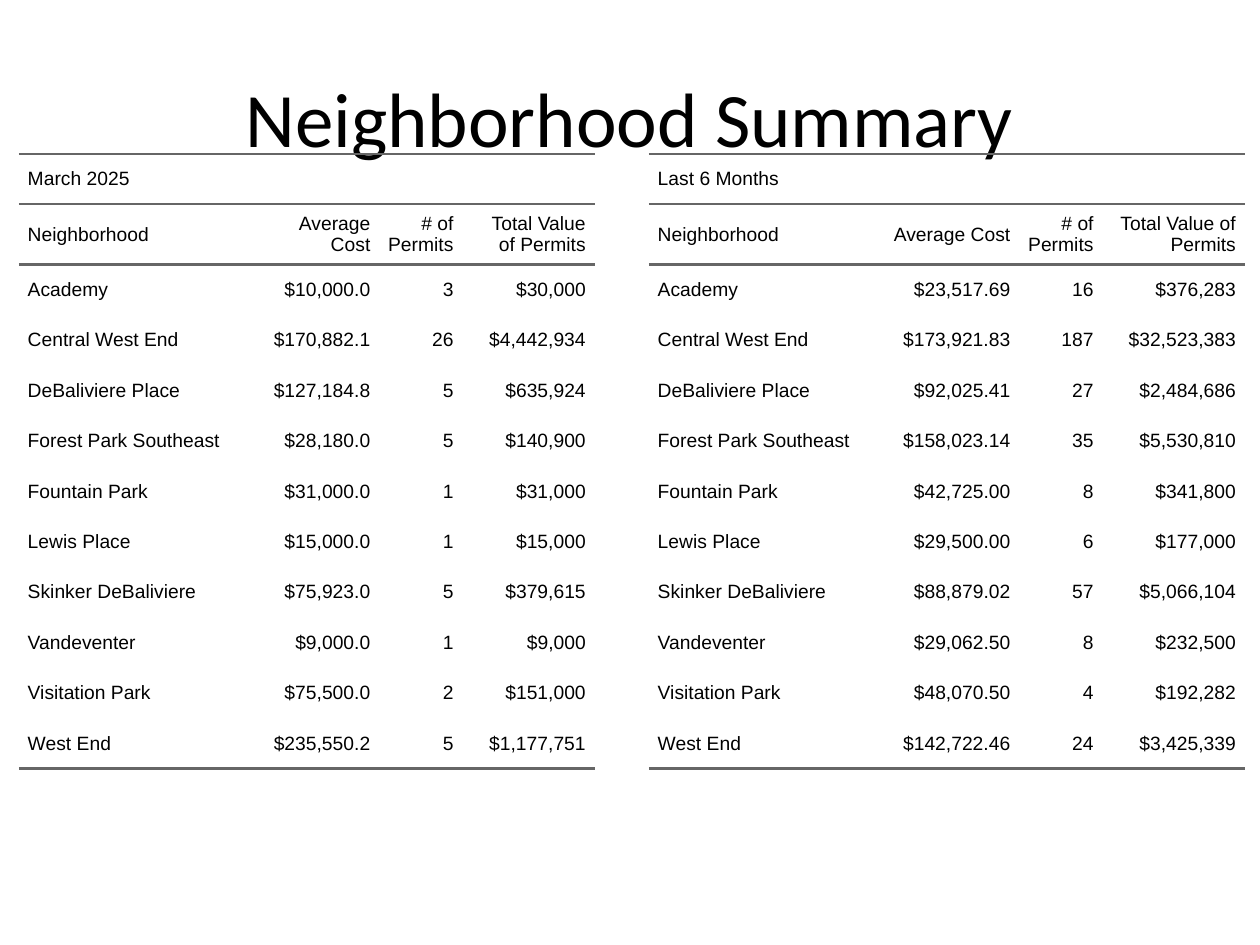
import lxml.etree
import pptx
import pptx.dml.color
import pptx.enum.text
import pptx.oxml.ns
import pptx.util

PX = 9144  # EMU per px, 100 px to the inch
COLORS = {"text": "000000", "rule": "666666"}
ROW_HEIGHT, PADDING = 40, 7
HEADINGS = ("Neighborhood", "Average Cost", "# of Permits", "Total Value of Permits")
MARCH = [
    ("Academy", "$10,000.0", "3", "$30,000"),
    ("Central West End", "$170,882.1", "26", "$4,442,934"),
    ("DeBaliviere Place", "$127,184.8", "5", "$635,924"),
    ("Forest Park Southeast", "$28,180.0", "5", "$140,900"),
    ("Fountain Park", "$31,000.0", "1", "$31,000"),
    ("Lewis Place", "$15,000.0", "1", "$15,000"),
    ("Skinker DeBaliviere", "$75,923.0", "5", "$379,615"),
    ("Vandeventer", "$9,000.0", "1", "$9,000"),
    ("Visitation Park", "$75,500.0", "2", "$151,000"),
    ("West End", "$235,550.2", "5", "$1,177,751"),
]
SIX_MONTHS = [
    ("Academy", "$23,517.69", "16", "$376,283"),
    ("Central West End", "$173,921.83", "187", "$32,523,383"),
    ("DeBaliviere Place", "$92,025.41", "27", "$2,484,686"),
    ("Forest Park Southeast", "$158,023.14", "35", "$5,530,810"),
    ("Fountain Park", "$42,725.00", "8", "$341,800"),
    ("Lewis Place", "$29,500.00", "6", "$177,000"),
    ("Skinker DeBaliviere", "$88,879.02", "57", "$5,066,104"),
    ("Vandeventer", "$29,062.50", "8", "$232,500"),
    ("Visitation Park", "$48,070.50", "4", "$192,282"),
    ("West End", "$142,722.46", "24", "$3,425,339"),
]


def add_text(para, text, font, size):
    span = para.add_run()
    span.text = text
    span.font.name = font
    span.font.size = pptx.util.Pt(size)
    span.font.color.rgb = pptx.dml.color.RGBColor.from_string(COLORS["text"])


def set_borders(cell, ruled):
    """Rule the sides named in ruled and clear the other ones."""
    properties = cell._tc.get_or_add_tcPr()
    for position, side in enumerate(("lnL", "lnR", "lnT", "lnB")):
        line = lxml.etree.Element(pptx.oxml.ns.qn("a:" + side))
        if side in ruled:
            line.set("w", str(pptx.util.Pt(1.5)))
            fill = lxml.etree.SubElement(line, pptx.oxml.ns.qn("a:solidFill"))
            color = lxml.etree.SubElement(fill, pptx.oxml.ns.qn("a:srgbClr"))
            color.set("val", COLORS["rule"])
        else:
            line.set("w", "0")
            lxml.etree.SubElement(line, pptx.oxml.ns.qn("a:noFill"))
        properties.insert(position, line)


def fill_cell(cell, text, align):
    cell.vertical_anchor = pptx.enum.text.MSO_ANCHOR.MIDDLE
    cell.margin_left = cell.margin_right = 0
    cell.margin_top = cell.margin_bottom = PADDING * PX
    para = cell.text_frame.paragraphs[0]
    para.alignment = align
    para.space_before = para.space_after = pptx.util.Pt(5)
    properties = para._p.get_or_add_pPr()
    for side in ("marL", "marR"):
        properties.set(side, str(PADDING * PX))
    properties.set("indent", "0")
    add_text(para, text, "Arial", 11)


def add_title(page, box, text):
    title = page.shapes.title
    title.left, title.top, title.width, title.height = (v * PX for v in box)
    title.text_frame.vertical_anchor = pptx.enum.text.MSO_ANCHOR.MIDDLE
    para = title.text_frame.paragraphs[0]
    para.alignment = pptx.enum.text.PP_ALIGN.CENTER
    add_text(para, text, "Calibri", 44)


def add_permit_table(page, left, top, widths, period, records):
    rows = [(period,), HEADINGS, *records]
    box = (left, top, sum(widths), ROW_HEIGHT * len(rows))
    table = page.shapes.add_table(len(rows), len(widths), *(v * PX for v in box)).table
    table.first_row = table.horz_banding = False
    for column, width in zip(table.columns, widths):
        column.width = width * PX
    table.cell(0, 0).merge(table.cell(0, len(widths) - 1))
    for y, row in enumerate(rows):
        table.rows[y].height = ROW_HEIGHT * PX
        if y < 2:
            ruled = ("lnT", "lnB")
        elif y == len(rows) - 1:
            ruled = ("lnB",)
        elif y == 2:
            ruled = ("lnT",)
        else:
            ruled = ()
        for x in range(len(widths)):
            cell = table.cell(y, x)
            cell.fill.background()
            set_borders(cell, ruled)
            if x < len(row):
                align = pptx.enum.text.PP_ALIGN.RIGHT if x else pptx.enum.text.PP_ALIGN.LEFT
                fill_cell(cell, row[x], align)


def main():
    deck = pptx.Presentation()
    deck.slide_width, deck.slide_height = 1000 * PX, 750 * PX
    page = deck.slides.add_slide(deck.slide_layouts[5])
    add_title(page, (50, 30, 900, 125), "Neighborhood Summary")
    add_permit_table(page, 15, 122, (181, 105, 66, 105), "March 2025", MARCH)
    add_permit_table(page, 515, 122, (181, 113, 66, 113), "Last 6 Months", SIX_MONTHS)
    deck.save("out.pptx")


if __name__ == "__main__":
    main()
